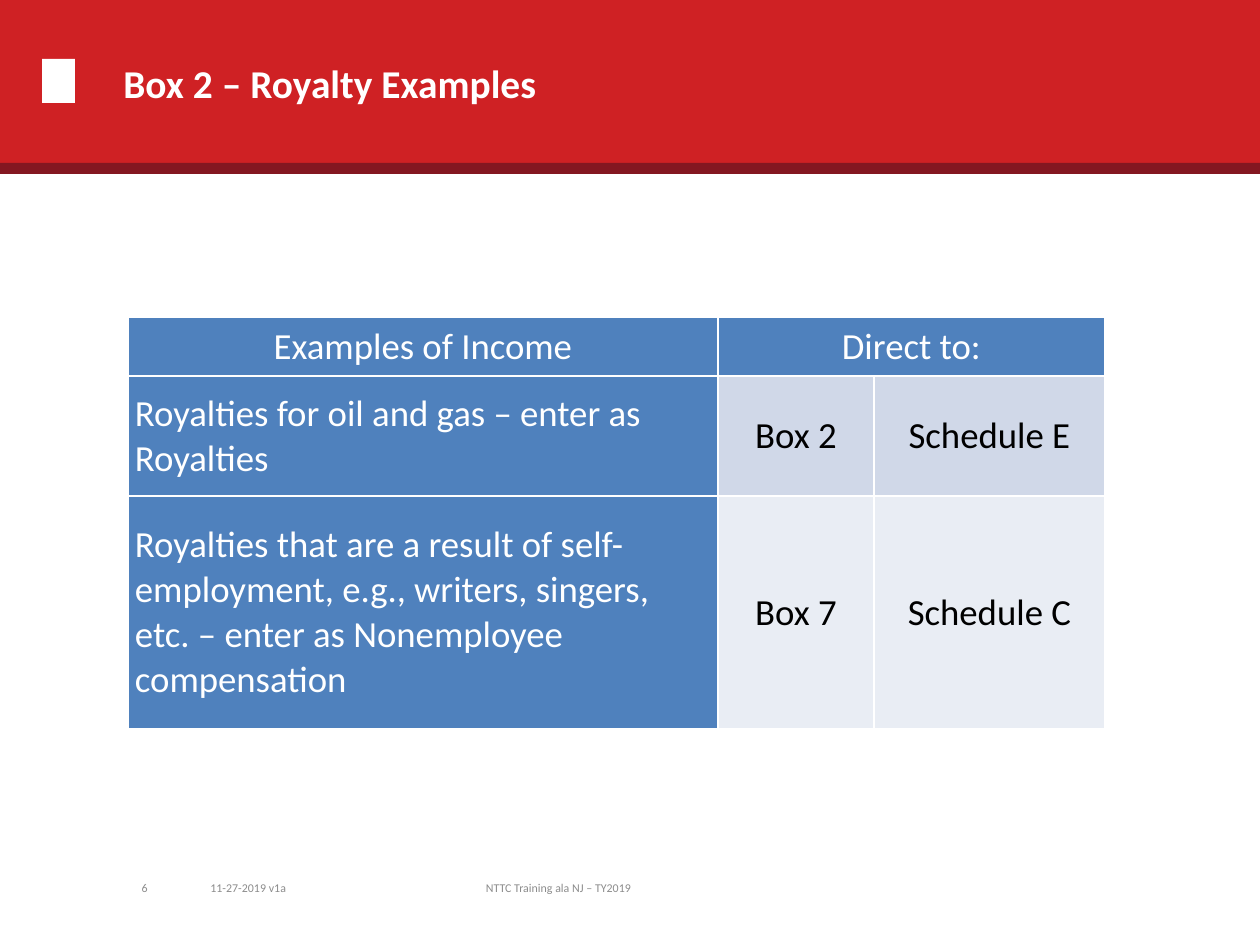
from dataclasses import dataclass

from lxml.etree import SubElement
from pptx import Presentation
from pptx.dml.color import RGBColor
from pptx.enum.shapes import MSO_SHAPE as Shape
from pptx.enum.text import MSO_ANCHOR as Anchor, PP_ALIGN as Align
from pptx.oxml.ns import qn
from pptx.util import Emu, Pt

PX = 914400 / 126


@dataclass(frozen=True)
class Theme:
    font: str = "Calibri"
    red: str = "CF2124"
    dark_red: str = "841721"
    white: str = "FFFFFF"
    black: str = "000000"
    grey: str = "8C8C8C"
    blue: str = "4F81BD"
    band_dark: str = "D0D8E8"
    band_light: str = "E9EDF4"
    title_size: float = 22.5
    table_size: float = 21
    footer_size: float = 6.8
    border_width: float = 1


theme = Theme()


def px(*lengths):
    """Turn pixel lengths into EMU."""
    return [Emu(round(length * PX)) for length in lengths]


def write(frame, text, size, color, align, bold=False):
    frame.word_wrap = True
    frame.text = text
    paragraph = frame.paragraphs[0]
    paragraph.alignment = align
    font = paragraph.runs[0].font
    font.name = theme.font
    font.size = Pt(size)
    font.bold = bold
    font.color.rgb = RGBColor.from_string(color)


prs = Presentation()
prs.slide_width, prs.slide_height = px(1260, 945)
slide = prs.slides.add_slide(prs.slide_layouts[6])

# Header band, white marker and dark rule
for box, color in [
    ((0, -1, 1260, 167), theme.red),
    ((42, 59, 33, 44), theme.white),
    ((0, 163, 1260, 11), theme.dark_red),
]:
    band = slide.shapes.add_shape(Shape.RECTANGLE, *px(*box))
    band.shadow.inherit = False
    band.fill.solid()
    band.fill.fore_color.rgb = RGBColor.from_string(color)
    band.line.fill.background()

# Title and footer
footer = (theme.footer_size, theme.grey)
for box, text, (size, color), align, bold in [
    ((111, 4, 1008, 158), "Box 2 – Royalty Examples",
     (theme.title_size, theme.white), Align.LEFT, True),
    ((63, 863, 97, 50), "6", footer, Align.RIGHT, False),
    ((198, 863, 137, 50), "11-27-2019 v1a", footer, Align.LEFT, False),
    ((359, 863, 399, 50), "NTTC Training ala NJ – TY2019", footer, Align.CENTER, False),
]:
    label = slide.shapes.add_textbox(*px(*box)).text_frame
    label.vertical_anchor = Anchor.MIDDLE
    write(label, text, size, color, align, bold)

# Income table
income_rows = [
    ("Examples of Income", "Direct to:", ""),
    ("Royalties for oil and gas – enter as Royalties", "Box 2", "Schedule E"),
    ("Royalties that are a result of self-employment, e.g., writers, singers, "
     "etc. – enter as Nonemployee compensation", "Box 7", "Schedule C"),
]
row_fills = [theme.blue, theme.band_dark, theme.band_light]
col_widths = px(590, 156, 231)
row_heights = px(59, 120, 233)

table = slide.shapes.add_table(
    3, 3, *px(128, 317), sum(col_widths), sum(row_heights)).table
for column, width in zip(table.columns, col_widths):
    column.width = width
for row, height in zip(table.rows, row_heights):
    row.height = height
table.cell(0, 1).merge(table.cell(0, 2))

for r, texts in enumerate(income_rows):
    for c, text in enumerate(texts):
        cell = table.cell(r, c)
        heading = r == 0 or c == 0
        cell.vertical_anchor = Anchor.MIDDLE
        cell.margin_left, cell.margin_right = px(7, 7)
        cell.margin_top = cell.margin_bottom = 0
        if text:
            write(cell.text_frame, text, theme.table_size,
                  theme.white if heading else theme.black,
                  Align.LEFT if r and c == 0 else Align.CENTER)
        # Borders must precede the fill in the cell properties
        properties = cell._tc.get_or_add_tcPr()
        for side in ("a:lnL", "a:lnR", "a:lnT", "a:lnB"):
            border = SubElement(properties, qn(side), w=str(Pt(theme.border_width)))
            line_fill = SubElement(border, qn("a:solidFill"))
            SubElement(line_fill, qn("a:srgbClr"), val=theme.white)
        cell.fill.solid()
        cell.fill.fore_color.rgb = RGBColor.from_string(
            theme.blue if heading else row_fills[r])

prs.save("out.pptx")
